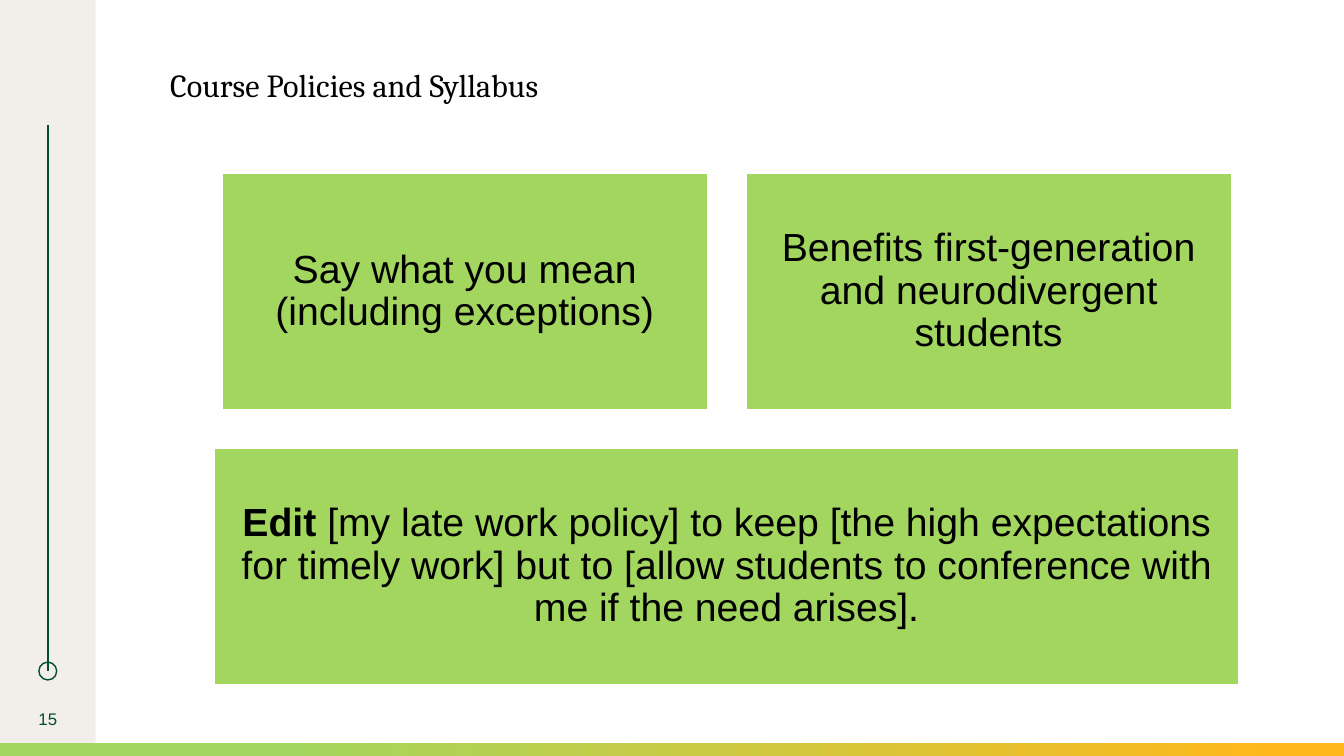
from dataclasses import dataclass

from lxml.etree import SubElement
from pptx import Presentation
from pptx.dml.color import RGBColor as RGB
from pptx.enum.shapes import MSO_CONNECTOR as CONN, MSO_SHAPE as SHAPE
from pptx.enum.text import MSO_ANCHOR as ANCHOR, PP_ALIGN as ALIGN
from pptx.oxml.ns import qn
from pptx.util import Cm, Pt


@dataclass(frozen=True)
class Theme:
    black: RGB = RGB(0, 0, 0)
    white: RGB = RGB(0xFF, 0xFF, 0xFF)
    forest: RGB = RGB(0x00, 0x50, 0x30)
    lime: RGB = RGB(0xA3, 0xD6, 0x5E)
    gold: RGB = RGB(0xFF, 0xB8, 0x1C)
    sand: RGB = RGB(0xF2, 0xEE, 0xE9)
    heading: str = "Cambria"
    body: str = "Arial"
    title_size: Pt = Pt(23)
    card_size: Pt = Pt(28)
    number_size: Pt = Pt(12)


T = Theme()
SLIDE_W, SLIDE_H = Cm(33.87), Cm(19.05)
SIDEBAR_W, STRIP_H = Cm(2.41), Cm(0.33)


def set_all(obj, values):
    for name, value in values.items():
        setattr(obj, name, value)


def set_text(shape, runs, size, color, font, inset, anchor, **para):
    """Write one paragraph; runs are (text, bold) pairs."""
    tf = shape.text_frame
    sides = ("margin_left", "margin_top", "margin_right", "margin_bottom")
    set_all(tf, dict.fromkeys(sides, inset))
    set_all(tf, {"word_wrap": True, "vertical_anchor": anchor})
    p = tf.paragraphs[0]
    set_all(p, para)
    for text, bold in runs:
        r = p.add_run()
        r.text = text
        set_all(r.font, {"size": size, "name": font, "bold": bold})
        r.font.color.rgb = color


def add_box(s, kind, box, fill=None, line=None):
    sp = s.shapes.add_shape(kind, *box)
    sp.shadow.inherit = False
    if fill is None:
        sp.fill.background()
    else:
        sp.fill.solid()
        sp.fill.fore_color.rgb = fill
    if line is None:
        sp.line.fill.background()
    else:
        sp.line.color.rgb = line
        sp.line.width = Pt(1)
    return sp


def add_sidebar(s, box, number):
    x, y, w, h = box
    add_box(s, SHAPE.RECTANGLE, box, T.sand)

    # Vertical rule ending in a ring
    mid, end, ring = x + w // 2, y + Cm(16.91), Cm(0.45)
    rule = s.shapes.add_connector(CONN.STRAIGHT, mid, y + Cm(3.15), mid, end)
    rule.line.color.rgb = T.forest
    rule.line.width = Pt(1)
    SubElement(rule._element.spPr, qn("a:effectLst"))
    ring_box = (mid - ring // 2, end - ring // 2, ring, ring)
    add_box(s, SHAPE.OVAL, ring_box, line=T.forest)

    # Slide number
    tb = s.shapes.add_textbox(x, y + Cm(17.6), w, Cm(1.02))
    set_text(tb, [(number, False)], T.number_size, T.forest, T.body,
             Cm(0.13), ANCHOR.MIDDLE, alignment=ALIGN.CENTER)


def add_strip(s, box):
    strip = add_box(s, SHAPE.RECTANGLE, box, T.lime)
    strip.fill.gradient()
    strip.fill.gradient_angle = 180
    stops = ((0.05, T.gold), (0.79, T.lime))
    for stop, (position, color) in zip(strip.fill.gradient_stops, stops):
        stop.position = position
        stop.color.rgb = color


def add_title(s, box, text):
    title = s.shapes.title
    set_all(title, dict(zip(("left", "top", "width", "height"), box)))
    set_text(title, [(text, False)], T.title_size, T.black, T.heading,
             0, ANCHOR.TOP, alignment=ALIGN.LEFT, line_spacing=0.9)


def add_cards(s, box, top_cards, wide_card):
    """Equal cards in a row, inset slightly, above one full-width card."""
    x, y, w, h = box
    gap, inset = Cm(0.97), Cm(0.18)
    n = len(top_cards)
    card_h = (h - gap) // 2
    card_w = (w - 2 * inset - (n - 1) * gap) // n
    cards = [((x + inset + i * (card_w + gap), y, card_w, card_h), runs)
             for i, runs in enumerate(top_cards)]
    cards.append(((x, y + card_h + gap, w, card_h), wide_card))
    for card_box, runs in cards:
        card = add_box(s, SHAPE.RECTANGLE, card_box, T.lime, T.white)
        set_text(card, runs, T.card_size, T.black, T.body, Cm(0.3),
                 ANCHOR.MIDDLE, alignment=ALIGN.CENTER, line_spacing=0.9)


def main():
    prs = Presentation()
    set_all(prs, {"slide_width": SLIDE_W, "slide_height": SLIDE_H})
    s = prs.slides.add_slide(prs.slide_layouts[5])

    add_sidebar(s, (0, 0, SIDEBAR_W, SLIDE_H), "15")
    add_strip(s, (0, SLIDE_H - STRIP_H, SLIDE_W, STRIP_H))
    add_title(s, (Cm(4.29), Cm(1.75), Cm(10.46), Cm(1.14)),
              "Course Policies and Syllabus")
    add_cards(
        s, (Cm(5.41), Cm(4.37), Cm(25.8), Cm(12.88)),
        [[("Say what you mean (including exceptions)", False)],
         [("Benefits first-generation and neurodivergent students", False)]],
        [("Edit", True),
         (" [my late work policy] to keep [the high expectations for timely "
          "work] but to [allow students to conference with me if the need "
          "arises].", False)])
    prs.save("out.pptx")


if __name__ == "__main__":
    main()
